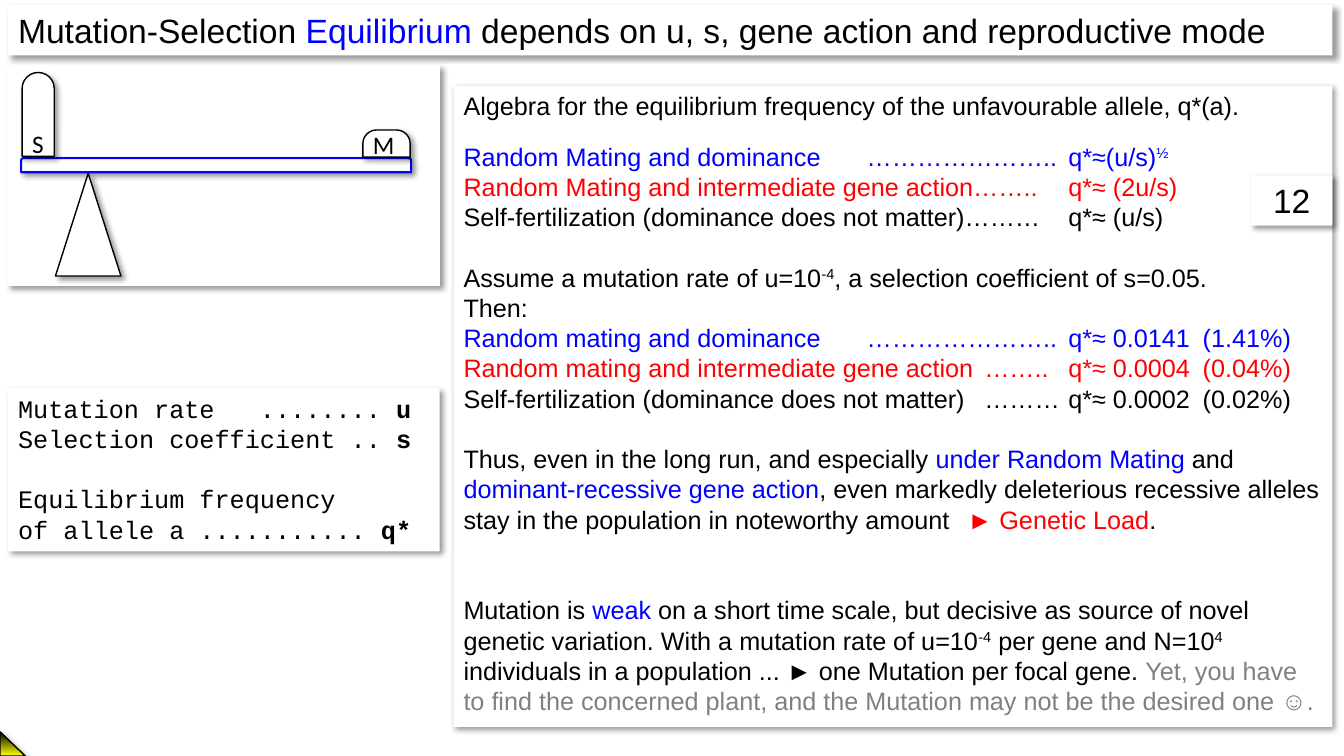
import pptx
import pptx.util
import pptx.dml.color
import pptx.enum.shapes
import pptx.enum.text
import pptx.oxml
from pptx.oxml.ns import nsdecls, qn

Pt = pptx.util.Pt
PRESET = pptx.enum.shapes.MSO_SHAPE
ALIGN = pptx.enum.text.PP_ALIGN

THEME = {
    "black": "000000", "blue": "0000FF", "red": "FF0000", "gray": "808080",
    "white": "FFFFFF", "yellow": "FFFF00",
    "sans": "Arial", "mono": "Courier New", "label": "Calibri",
    "title": 24, "body": 18, "leading": 1.2,
}

# Paragraph: (space before, tab stops, spans); span: (text, colour, style)
ROW_STOPS = (288, 372, 432, 528)
DOTS = "………………….."
TITLE = [(0, (), [
    ("Mutation-Selection ", "black", ""), ("Equilibrium", "blue", ""),
    (" depends on u, s, gene action and reproductive mode", "black", "")])]
ALGEBRA = [
    (0, (), [("Algebra for the equilibrium frequency of the unfavourable allele, q*(a).",
              "black", "")]),
    (14.4, ROW_STOPS, [(f"Random Mating and dominance\t{DOTS}\tq*≈(u/s)", "blue", ""),
                       ("½", "blue", "super")]),
    (0, ROW_STOPS, [("Random Mating and intermediate gene action……..\tq*≈ (2u/s)",
                     "red", "")]),
    (0, ROW_STOPS, [("Self-fertilization (dominance does not matter)………\tq*≈ (u/s)",
                     "black", "")]),
    (21.6, (), [("Assume a mutation rate of u=10", "black", ""), ("-4", "black", "super"),
                (", a selection coefficient of s=0.05.", "black", "")]),
    (0, (), [("Then:", "black", "")]),
    (0, ROW_STOPS, [(f"Random mating and dominance\t{DOTS}\tq*≈ 0.0141\t(1.41%)",
                     "blue", "")]),
    (0, ROW_STOPS, [("Random mating and intermediate gene action\t……..\tq*≈ 0.0004\t(0.04%)",
                     "red", "")]),
    (0, ROW_STOPS, [("Self-fertilization (dominance does not matter)\t………\tq*≈ 0.0002\t(0.02%)",
                     "black", "")]),
    (21.6, (360,), [
        ("Thus, even in the long run, and especially ", "black", ""),
        ("under Random Mating ", "blue", ""), ("and ", "black", ""),
        ("dominant-recessive gene action", "blue", ""),
        (", even markedly deleterious recessive alleles stay in the population "
         "in noteworthy amount\t", "black", ""),
        ("► Genetic Load", "red", ""), (".", "black", "")]),
    (43.2, (), [
        ("Mutation is ", "black", ""), ("weak", "blue", ""),
        (" on a short time scale, but decisive as source of novel genetic variation. "
         "With a mutation rate of u=10", "black", ""),
        ("-4", "black", "super"), (" per gene and N=10", "black", ""),
        ("4", "black", "super"),
        (" individuals in a population ... ► one Mutation per focal gene. ", "black", ""),
        ("Yet, you have to find the concerned plant, and the Mutation may not be "
         "the desired one ☺.", "gray", "")]),
]
SYMBOLS = [
    (0, (172.8,), [("Mutation rate\t........ ", "black", ""), ("u", "black", "bold")]),
    (0, (), [("Selection coefficient .. ", "black", ""), ("s", "black", "bold")]),
    (21.6, (), [("Equilibrium frequency", "black", "")]),
    (0, (), [("of allele a ........... ", "black", ""), ("q*", "black", "bold")]),
]
PAGE_NUMBER = [(0, (), [("12", "black", "")])]

# Balance parts: preset, place, adjustments, line colour, line width
BALANCE = [
    (PRESET.ISOSCELES_TRIANGLE, (39.6, 123.8, 46.8, 73.4), (), "black", 1),
    (PRESET.ROUND_2_SAME_RECTANGLE, (15.1, 113, 278.6, 10.1), (), "blue", 1.5),
    (PRESET.ROUND_2_SAME_RECTANGLE, (15.8, 51.8, 23, 59.8), (0.5, 0), "black", 1),
    (PRESET.ROUND_2_SAME_RECTANGLE, (259.2, 92.9, 33.8, 19.4), (0.5, 0), "black", 1),
]
WEIGHT_LABELS = [("S", (15.8, 87.8, 41.8, 28.8)), ("M", (259.2, 88.6, 41.8, 28.8))]

LEFT, RIGHT, COLUMN = 5.8, 951.8, 308.2
BODY_LEFT = 324


def rgb(name):
    return pptx.dml.color.RGBColor.from_string(THEME[name])


def cast_shadow(shape):
    shape.shadow.inherit = False
    effects = shape._element.spPr.find(qn("a:effectLst"))
    effects.append(pptx.oxml.parse_xml(
        f'<a:outerShdw {nsdecls("a")} blurRad="{Pt(4)}" dist="{Pt(3)}" dir="2700000" '
        'algn="tl" rotWithShape="0"><a:srgbClr val="000000"><a:alpha val="40000"/>'
        '</a:srgbClr></a:outerShdw>'))


def add_panel(shapes, place, preset=PRESET.RECTANGLE, line=None, width=1, adjust=()):
    """Add a white shape with a soft shadow."""
    panel = shapes.add_shape(preset, *map(Pt, place))
    for index, value in enumerate(adjust):
        panel.adjustments[index] = value
    panel.fill.solid()
    panel.fill.fore_color.rgb = rgb("white")
    if line:
        panel.line.color.rgb = rgb(line)
        panel.line.width = Pt(width)
    else:
        panel.line.fill.background()
    cast_shadow(panel)
    return panel


def set_tabs(para, stops):
    tabs = "".join(f'<a:tab pos="{Pt(stop)}" algn="l"/>' for stop in stops)
    para._p.get_or_add_pPr().append(
        pptx.oxml.parse_xml(f'<a:tabLst {nsdecls("a")}>{tabs}</a:tabLst>'))


def write(box, paragraphs, size="body", font="sans", align=ALIGN.LEFT):
    frame = box.text_frame
    frame.word_wrap = True
    frame.vertical_anchor = pptx.enum.text.MSO_ANCHOR.TOP
    for index, (gap, stops, spans) in enumerate(paragraphs):
        para = frame.add_paragraph() if index else frame.paragraphs[0]
        if stops:
            set_tabs(para, stops)
        para.alignment = align
        para.line_spacing = Pt(THEME[size] * THEME["leading"])
        if gap:
            para.space_before = Pt(gap)
        for text, color, style in spans:
            span = para.add_run()
            span.text = text
            span.font.name = THEME[font]
            span.font.size = Pt(THEME[size])
            span.font.color.rgb = rgb(color)
            if style == "bold":
                span.font.bold = True
            elif style == "super":
                span.font._element.set("baseline", "30000")


def add_balance(page):
    add_panel(page.shapes, (LEFT, 46.8, COLUMN, 157), line="white")
    group = page.shapes.add_group_shape()
    for preset, place, adjust, line, width in BALANCE:
        add_panel(group.shapes, place, preset, line, width, adjust)
    for letter, place in WEIGHT_LABELS:
        box = group.shapes.add_textbox(*map(Pt, place))
        write(box, [(0, (), [(letter, "black", "")])], font="label")


def add_corner(page):
    corner = add_panel(page.shapes, (0, 522.7, 18, 17.3), PRESET.RIGHT_TRIANGLE, "black")
    corner.fill.gradient()
    corner.fill.gradient_angle = 270
    for stop, color in zip(corner.fill.gradient_stops, ("black", "yellow")):
        stop.color.rgb = rgb(color)
    corner.fill.gradient_stops[0].position = 0
    corner.fill.gradient_stops[1].position = 1


def main():
    deck = pptx.Presentation()
    deck.slide_width, deck.slide_height = Pt(960), Pt(540)
    page = deck.slides.add_slide(deck.slide_layouts[6])
    add_balance(page)
    write(add_panel(page.shapes, (LEFT, 3.6, RIGHT - LEFT, 36)), TITLE, "title")
    add_corner(page)
    write(add_panel(page.shapes, (BODY_LEFT, 61.2, RIGHT - BODY_LEFT, 458)), ALGEBRA)
    write(add_panel(page.shapes, (RIGHT - 58.3, 125.3, 58.3, 36)), PAGE_NUMBER,
          "title", align=ALIGN.CENTER)
    write(add_panel(page.shapes, (LEFT, 277.2, COLUMN, 116.6)), SYMBOLS, font="mono")
    deck.save("out.pptx")


if __name__ == "__main__":
    main()
